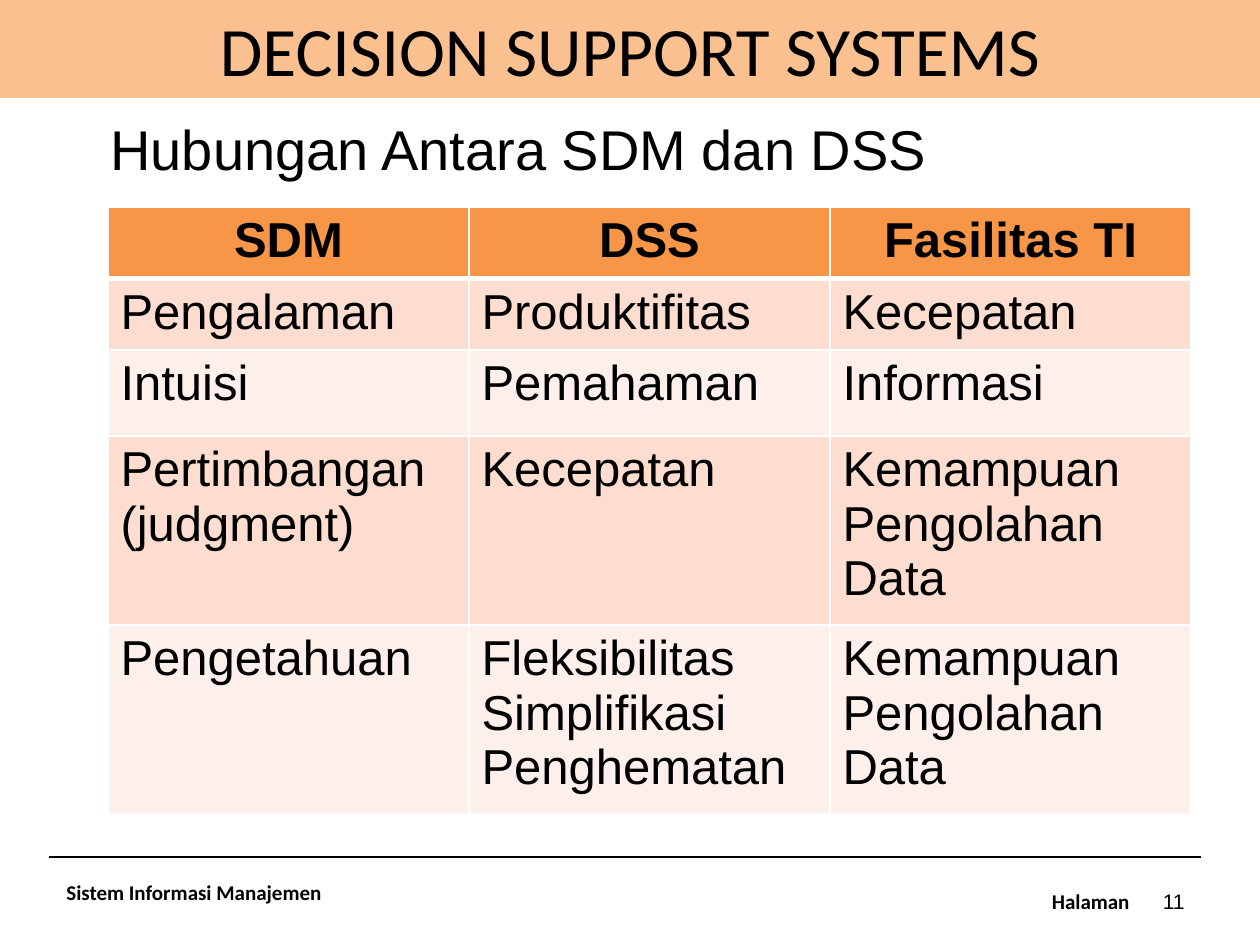
from dataclasses import dataclass

from lxml import etree
from pptx import Presentation
from pptx import util as u
from pptx.dml.color import RGBColor
from pptx.enum import shapes, text
from pptx.oxml import ns


@dataclass(frozen=True)
class Theme:
    black: str = "000000"
    white: str = "FFFFFF"
    banner: str = "FAC090"
    header: str = "F79646"
    bands: tuple = ("FCDDCF", "FDEFE9")
    heading_font: str = "Calibri"
    body_font: str = "Arial"
    title_size: float = 39.6
    subtitle_size: int = 32
    table_size: int = 28
    footer_size: int = 12


THEME = Theme()
ALIGN = text.PP_ALIGN
ANCHOR = text.MSO_ANCHOR
PX_PER_INCH = 126


def px(length):
    return u.Emu(round(length * 914400 / PX_PER_INCH))


def write(frame, content, size, font=THEME.body_font, bold=False,
          align=ALIGN.LEFT, color=THEME.black):
    frame.word_wrap = True
    for index, line in enumerate(content.split("\n")):
        paragraph = frame.paragraphs[0] if index == 0 else frame.add_paragraph()
        paragraph.alignment = align
        run = paragraph.add_run()
        run.text = line
        run.font.size = u.Pt(size)
        run.font.name = font
        run.font.bold = bold
        run.font.color.rgb = RGBColor.from_string(color)


class SlideBuilder:
    def __init__(self, slide, theme):
        self.slide = slide
        self.theme = theme

    def textbox(self, box, content, size, anchor=ANCHOR.MIDDLE, **style):
        shape = self.slide.shapes.add_textbox(*map(px, box))
        shape.text_frame.vertical_anchor = anchor
        write(shape.text_frame, content, size, **style)

    def banner(self, box, content):
        shape = self.slide.shapes.add_shape(
            shapes.MSO_SHAPE.RECTANGLE, *map(px, box))
        shape.shadow.inherit = False
        shape.fill.solid()
        shape.fill.fore_color.rgb = RGBColor.from_string(self.theme.banner)
        shape.line.fill.background()
        shape.text_frame.vertical_anchor = ANCHOR.MIDDLE
        write(shape.text_frame, content, self.theme.title_size,
              font=self.theme.heading_font, align=ALIGN.CENTER)

    def rule(self, left, right, y, width):
        line = self.slide.shapes.add_connector(
            shapes.MSO_CONNECTOR.STRAIGHT, px(left), px(y), px(right), px(y))
        line.line.color.rgb = RGBColor.from_string(self.theme.black)
        line.line.width = u.Pt(width)
        etree.SubElement(line._element.spPr, ns.qn("a:effectLst"))

    def borders(self, cell, **widths):
        properties = cell._tc.get_or_add_tcPr()
        for side in "LRTB":
            line = etree.SubElement(properties, ns.qn(f"a:ln{side}"),
                                    w=str(u.Pt(widths.get(side, 1))))
            fill = etree.SubElement(line, ns.qn("a:solidFill"))
            etree.SubElement(fill, ns.qn("a:srgbClr"), val=self.theme.white)

    def table(self, left, top, column_width, heights, rows):
        columns = len(rows[0])
        table = self.slide.shapes.add_table(
            len(rows), columns, px(left), px(top),
            px(column_width * columns), px(sum(heights))).table
        for column in table.columns:
            column.width = px(column_width)
        for index, (height, row) in enumerate(zip(heights, rows)):
            table.rows[index].height = px(height)
            is_header = index == 0
            color = self.theme.header if is_header else self.theme.bands[(index - 1) % 2]
            edges = {0: {"B": 3}, 1: {"T": 3}}.get(index, {})
            for cell, content in zip(table.rows[index].cells, row):
                self.borders(cell, **edges)
                cell.fill.solid()
                cell.fill.fore_color.rgb = RGBColor.from_string(color)
                write(cell.text_frame, content, self.theme.table_size, bold=is_header,
                      align=ALIGN.CENTER if is_header else ALIGN.LEFT)


def main():
    presentation = Presentation()
    presentation.slide_width, presentation.slide_height = px(1260), px(945)
    slide = presentation.slides.add_slide(presentation.slide_layouts[6])
    builder = SlideBuilder(slide, THEME)
    footer = {"size": THEME.footer_size}
    label = {**footer, "font": THEME.heading_font, "bold": True}

    builder.textbox((1024, 876, 118, 50), "Halaman", align=ALIGN.RIGHT, **label)
    builder.rule(49, 1201, 857, 1.5)
    builder.textbox((1142, 876, 55, 50), "11", align=ALIGN.RIGHT, **footer)
    builder.textbox((54, 867, 320, 50), "Sistem Informasi Manajemen", **label)
    builder.banner((0, 0, 1260, 98), "DECISION SUPPORT SYSTEMS")
    builder.table(108, 207, 361, (67, 67, 86, 176, 176), (
        ("SDM", "DSS", "Fasilitas TI"),
        ("Pengalaman", "Produktifitas", "Kecepatan"),
        ("Intuisi", "Pemahaman", "Informasi"),
        ("Pertimbangan (judgment)", "Kecepatan", "Kemampuan\nPengolahan Data"),
        ("Pengetahuan", "Fleksibilitas\nSimplifikasi\nPenghematan",
         "Kemampuan Pengolahan Data"),
    ))
    builder.textbox((98, 108, 1103, 81), "Hubungan Antara SDM dan DSS",
                    THEME.subtitle_size, anchor=ANCHOR.TOP)
    presentation.save("out.pptx")


if __name__ == "__main__":
    main()
